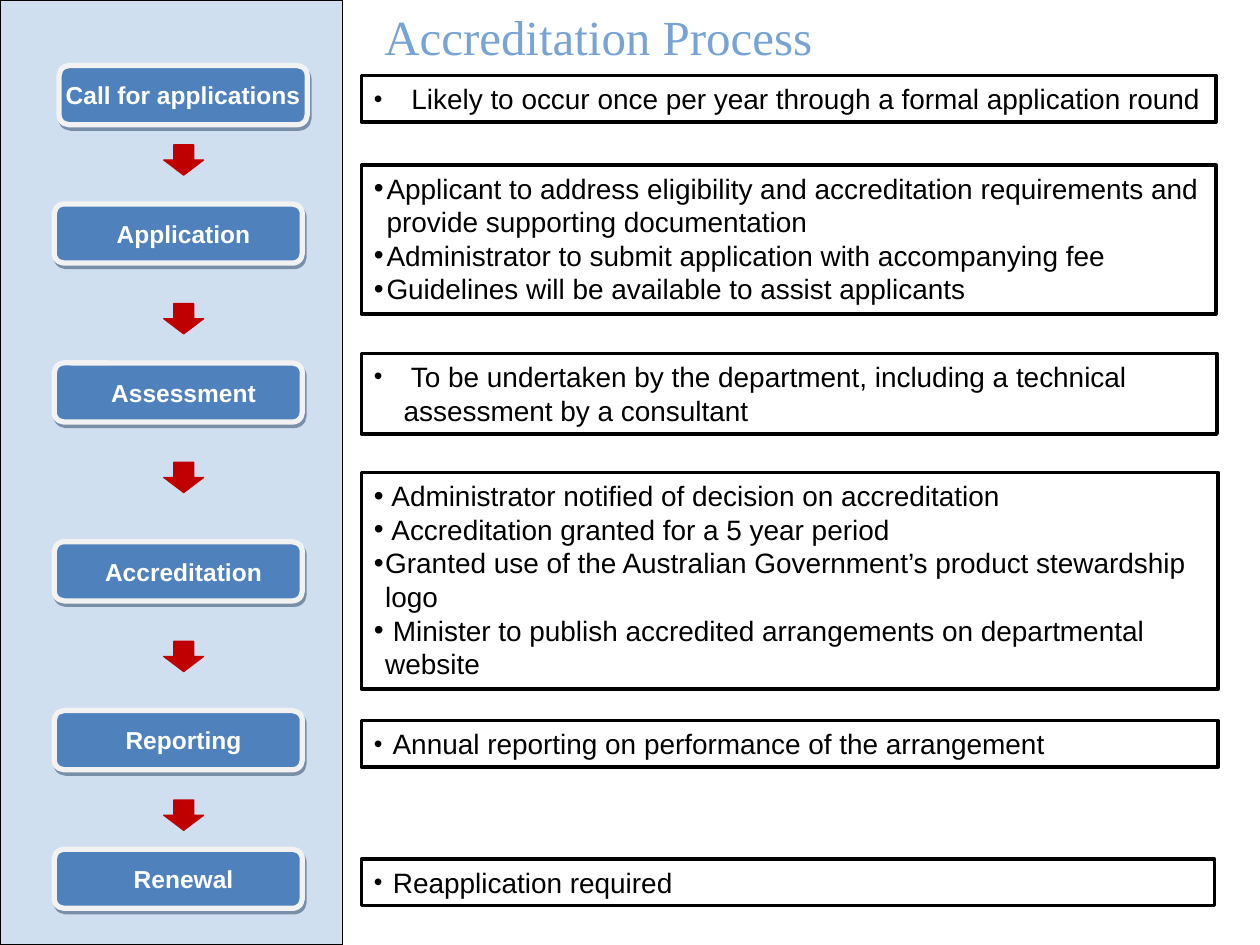
import pptx
import pptx.util
import pptx.dml.color
import pptx.enum.shapes
import pptx.enum.text
import pptx.oxml
import pptx.oxml.ns

Pt = pptx.util.Pt
SHAPES = pptx.enum.shapes.MSO_SHAPE
ALIGN = pptx.enum.text.PP_ALIGN
ANCHOR = pptx.enum.text.MSO_ANCHOR

COLORS = {
    "panel": "D0DFF0",
    "step": "4F81BD",
    "step_line": "F2F2F2",
    "shadow": "243F60",
    "arrow": "C00000",
    "title": "77A3D5",
    "black": "000000",
    "white": "FFFFFF",
}

TITLE = "Accreditation Process"
STEPS = [
    {"name": "Call for applications", "left": 33.8, "top": 37.5, "inset": 0, "arrow_top": 82.8,
     "box": (43.2, 488.2, 26.6), "indent": 17, "bullet_percent": 88,
     "notes": [" Likely to occur once per year through a formal application round"]},
    {"name": "Application", "left": 31, "top": 116.6, "inset": 6, "arrow_top": 173.5,
     "box": (94.3, 488.2, 85), "indent": 7.2, "bullet_percent": 100,
     "notes": ["Applicant to address eligibility and accreditation requirements and "
               "provide supporting documentation",
               "Administrator to submit application with accompanying fee",
               "Guidelines will be available to assist applicants"]},
    {"name": "Assessment", "left": 31, "top": 207.4, "inset": 6, "arrow_top": 264.2,
     "box": (202, 488.9, 46.1), "indent": 17, "bullet_percent": 88,
     "notes": [" To be undertaken by the department, including a technical "
               "assessment by a consultant"]},
    {"name": "Accreditation", "left": 31, "top": 309.6, "inset": 6, "arrow_top": 366.5,
     "box": (270, 489.6, 123.8), "indent": 6.5, "bullet_percent": 100,
     "notes": [" Administrator notified of decision on accreditation",
               " Accreditation granted for a 5 year period",
               "Granted use of the Australian Government’s product stewardship logo",
               " Minister to publish accredited arrangements on departmental website"]},
    {"name": "Reporting", "left": 31, "top": 406.1, "inset": 6, "arrow_top": 457.2,
     "box": (411.8, 489.6, 26.6), "indent": 7.2, "bullet_percent": 88,
     "notes": [" Annual reporting on performance of the arrangement"]},
    {"name": "Renewal", "left": 31, "top": 485.3, "inset": 6, "arrow_top": None,
     "box": (491, 487.4, 26.6), "indent": 6.5, "bullet_percent": 88,
     "notes": [" Reapplication required"]},
]

STEP_SIZE = (141.8, 33.8)
ARROW_LEFT, ARROW_SIZE = 93.6, (22.8, 17.3)
BOX_LEFT = 206.6


def rgb(name):
    return pptx.dml.color.RGBColor.from_string(COLORS[name])


def add_shape(slide, kind, left, top, width, height, fill, line, weight):
    shape = slide.shapes.add_shape(kind, Pt(left), Pt(top), Pt(width), Pt(height))
    shape.shadow.inherit = False
    shape.fill.solid()
    shape.fill.fore_color.rgb = rgb(fill)
    shape.line.color.rgb = rgb(line)
    shape.line.width = Pt(weight)
    return shape


def style_font(font, name, size, color, bold=False):
    font.name = name
    font.size = Pt(size)
    font.bold = bold
    font.color.rgb = rgb(color)


def add_shadow(shape):
    effects = shape._element.spPr.find(pptx.oxml.ns.qn("a:effectLst"))
    effects.append(pptx.oxml.parse_xml(
        f'<a:outerShdw {pptx.oxml.ns.nsdecls("a")} dist="{Pt(2.2)}" dir="{63 * 60000}" '
        f'algn="ctr" rotWithShape="0"><a:srgbClr val="{COLORS["shadow"]}">'
        '<a:alpha val="50000"/></a:srgbClr></a:outerShdw>'))


def add_bullet(paragraph, indent, percent):
    properties = paragraph._p.get_or_add_pPr()
    properties.set("marL", str(Pt(indent)))
    properties.set("indent", str(-Pt(indent)))
    for element in (f'buSzPct {{}} val="{percent * 1000}"', 'buFont {} typeface="Arial"',
                    'buChar {} char="•"'):
        properties.append(pptx.oxml.parse_xml(
            "<a:" + element.format(pptx.oxml.ns.nsdecls("a")) + "/>"))


def add_step(slide, step):
    shape = add_shape(slide, SHAPES.ROUNDED_RECTANGLE, step["left"], step["top"], *STEP_SIZE,
                      "step", "step_line", 3)
    add_shadow(shape)
    frame = shape.text_frame
    frame.word_wrap = False
    frame.vertical_anchor = ANCHOR.MIDDLE
    frame.margin_left = Pt(step["inset"])
    frame.margin_right = frame.margin_top = frame.margin_bottom = 0
    frame.text = step["name"]
    paragraph = frame.paragraphs[0]
    paragraph.alignment = ALIGN.CENTER
    style_font(paragraph.runs[0].font, "Arial", 14, "white", True)


def add_notes_box(slide, step):
    top, width, height = step["box"]
    shape = add_shape(slide, SHAPES.RECTANGLE, BOX_LEFT, top, width, height, "white", "black", 2)
    frame = shape.text_frame
    frame.word_wrap = True
    frame.vertical_anchor = ANCHOR.TOP
    frame.text = "\n".join(step["notes"])
    for paragraph in frame.paragraphs:
        paragraph.alignment = ALIGN.LEFT
        add_bullet(paragraph, step["indent"], step["bullet_percent"])
        style_font(paragraph.runs[0].font, "Arial", 16, "black")


def add_title(slide):
    title = slide.shapes.title
    title.left, title.top, title.width, title.height = Pt(212.4), 0, Pt(475.9), Pt(41)
    frame = title.text_frame
    frame.text = TITLE
    frame.word_wrap = True
    frame.vertical_anchor = ANCHOR.TOP
    paragraph = frame.paragraphs[0]
    paragraph.alignment = ALIGN.LEFT
    style_font(paragraph.runs[0].font, "Times New Roman", 28, "title")


def main():
    presentation = pptx.Presentation()
    presentation.slide_width, presentation.slide_height = Pt(720), Pt(540)
    slide = presentation.slides.add_slide(presentation.slide_layouts[5])
    add_title(slide)
    add_shape(slide, SHAPES.RECTANGLE, 0, 0, 195.8, 540, "panel", "black", 0.75)
    for step in STEPS:
        add_step(slide, step)
        if step["arrow_top"] is not None:
            add_shape(slide, SHAPES.DOWN_ARROW, ARROW_LEFT, step["arrow_top"], *ARROW_SIZE,
                      "arrow", "arrow", 0.75)
        add_notes_box(slide, step)
    presentation.save("out.pptx")


if __name__ == "__main__":
    main()
